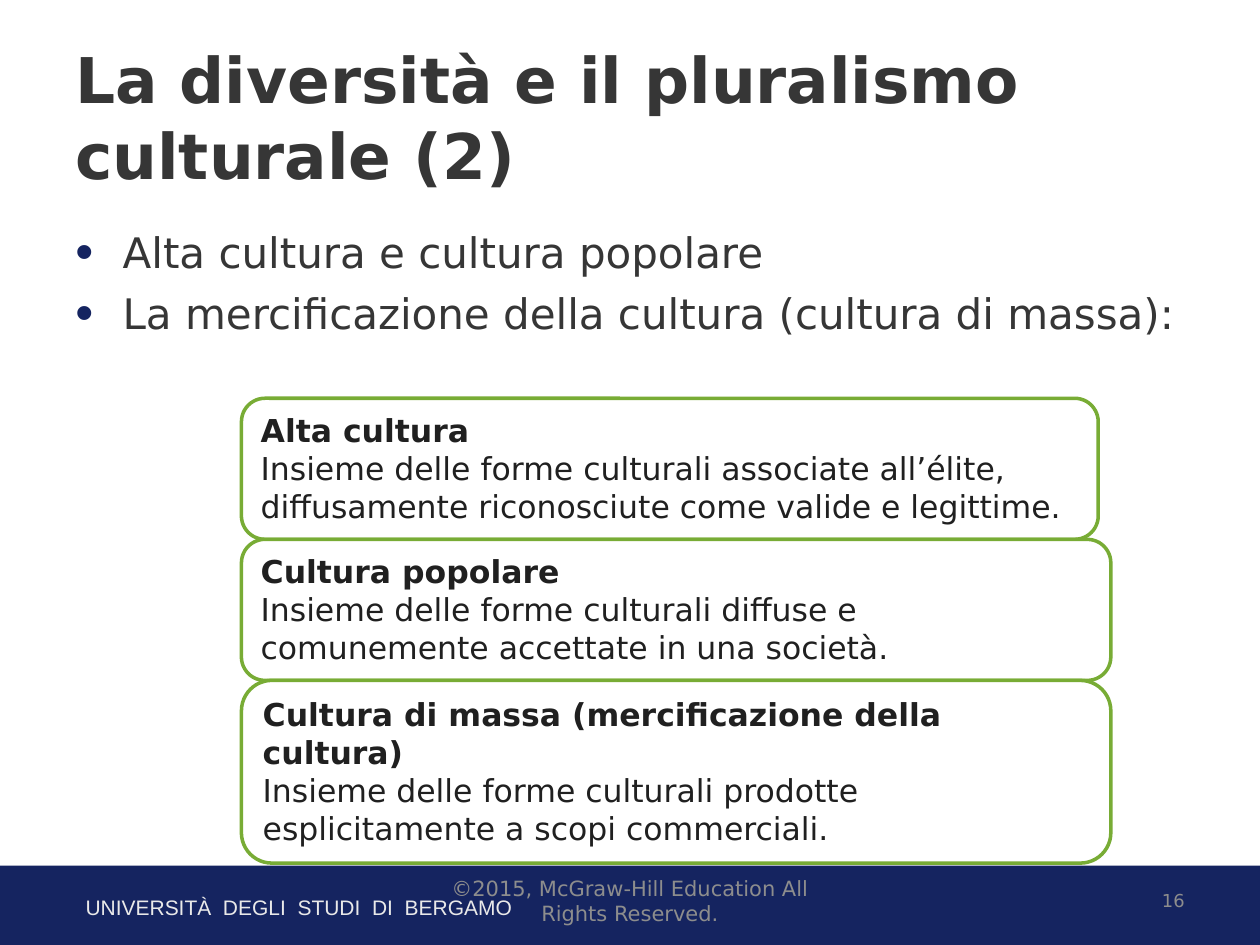
from pptx import Presentation
from pptx.dml.color import RGBColor
from pptx.enum.shapes import MSO_SHAPE
from pptx.enum.text import MSO_ANCHOR, PP_ALIGN
from pptx.oxml import parse_xml
from pptx.oxml.ns import nsdecls
from pptx.util import Pt

COLORS = {
    "navy": "152460", "green": "78AC35", "white": "FFFFFF", "pale": "E9E9E9",
    "dark": "363636", "ink": "202020", "gray": "8D8D8D",
}
SANS = "DejaVu Sans"
LEFT, WIDE = 36, 648
POINTS = [
    "Alta cultura e cultura popolare",
    "La mercificazione della cultura (cultura di massa):",
]
CARDS = [
    ("Alta cultura",
     "Insieme delle forme culturali associate all’élite, "
     "diffusamente riconosciute come valide e legittime.", 489.6, 80.6),
    ("Cultura popolare",
     "Insieme delle forme culturali diffuse e "
     "comunemente accettate in una società.", 496.8, 80.6),
    ("Cultura di massa (mercificazione della cultura)",
     "Insieme delle forme culturali prodotte "
     "esplicitamente a scopi commerciali.", 496.8, 104.4),
]


def color(name):
    return RGBColor.from_string(COLORS[name])


def write(para, text, size, tint, bold=False, face=SANS):
    run = para.add_run()
    run.text = text
    run.font.size = Pt(size)
    run.font.name = face
    run.font.bold = bold
    run.font.color.rgb = color(tint)


def add_text(slide, x, y, w, h, anchor=MSO_ANCHOR.TOP):
    frame = slide.shapes.add_textbox(Pt(x), Pt(y), Pt(w), Pt(h)).text_frame
    frame.word_wrap = True
    frame.vertical_anchor = anchor
    return frame


def add_block(slide, kind, x, y, w, h, fill):
    shape = slide.shapes.add_shape(kind, Pt(x), Pt(y), Pt(w), Pt(h))
    shape.shadow.inherit = False
    shape.fill.solid()
    shape.fill.fore_color.rgb = color(fill)
    return shape


def add_title(slide, x, y, w, h):
    frame = add_text(slide, x, y, w, h, MSO_ANCHOR.MIDDLE)
    write(frame.paragraphs[0], "La diversità e il pluralismo culturale (2)",
          36, "dark", True)


def add_bullet(para):
    props = para._p.get_or_add_pPr()
    props.set("marL", str(Pt(27)))
    props.set("indent", str(Pt(-27)))
    for part in (
        f'<a:buClr {nsdecls("a")}><a:srgbClr val="{COLORS["navy"]}"/></a:buClr>',
        f'<a:buSzPct {nsdecls("a")} val="122000"/>',
        f'<a:buFont {nsdecls("a")} typeface="Arial"/>',
        f'<a:buChar {nsdecls("a")} char="•"/>',
    ):
        props.append(parse_xml(part))


def add_list(slide, x, y, w, h):
    frame = add_text(slide, x, y, w, h)
    for i, text in enumerate(POINTS):
        para = frame.add_paragraph() if i else frame.paragraphs[0]
        add_bullet(para)
        if i:
            para.space_before = Pt(6)
        write(para, text, 24, "dark")


def add_cards(slide, x, y):
    for head, body, w, h in CARDS:
        card = add_block(slide, MSO_SHAPE.ROUNDED_RECTANGLE, x, y, w, h, "white")
        card.line.color.rgb = color("green")
        card.line.width = Pt(2)
        frame = card.text_frame
        frame.word_wrap = True
        frame.vertical_anchor = MSO_ANCHOR.TOP
        first, second = frame.paragraphs[0], frame.add_paragraph()
        first.alignment = second.alignment = PP_ALIGN.LEFT
        write(first, head, 18, "ink", True)
        write(second, body, 18, "ink")
        y += h


def add_band(slide, x, y, w, h):
    band = add_block(slide, MSO_SHAPE.RECTANGLE, x, y, w, h, "navy")
    band.line.fill.background()
    frame = add_text(slide, x + 41.8, y + 13, 419, 21.6)
    write(frame.paragraphs[0], "UNIVERSITÀ  DEGLI  STUDI  DI  BERGAMO",
          12, "pale", face="Arial")


def add_notes(slide, x, y, w, h):
    for text, size, side, left, span in (
        ("16", 10.2, PP_ALIGN.RIGHT, x + w - 168, 168),
        ("©2015, McGraw-Hill Education All Rights Reserved.", 12,
         PP_ALIGN.CENTER, x + (w - 228) / 2, 228),
    ):
        para = add_text(slide, left, y, span, h, MSO_ANCHOR.MIDDLE).paragraphs[0]
        para.alignment = side
        write(para, text, size, "gray")


def main():
    deck = Presentation()
    deck.slide_width, deck.slide_height = Pt(720), Pt(540)
    slide = deck.slides.add_slide(deck.slide_layouts[6])
    add_band(slide, 0, 494.6, 720, 49)
    add_title(slide, LEFT, 21.6, WIDE, 90)
    add_list(slide, LEFT, 126, WIDE, 356.4)
    add_cards(slide, 138, 227.6)
    add_notes(slide, LEFT, 500.4, WIDE, 28.8)
    deck.save("out.pptx")


if __name__ == "__main__":
    main()
